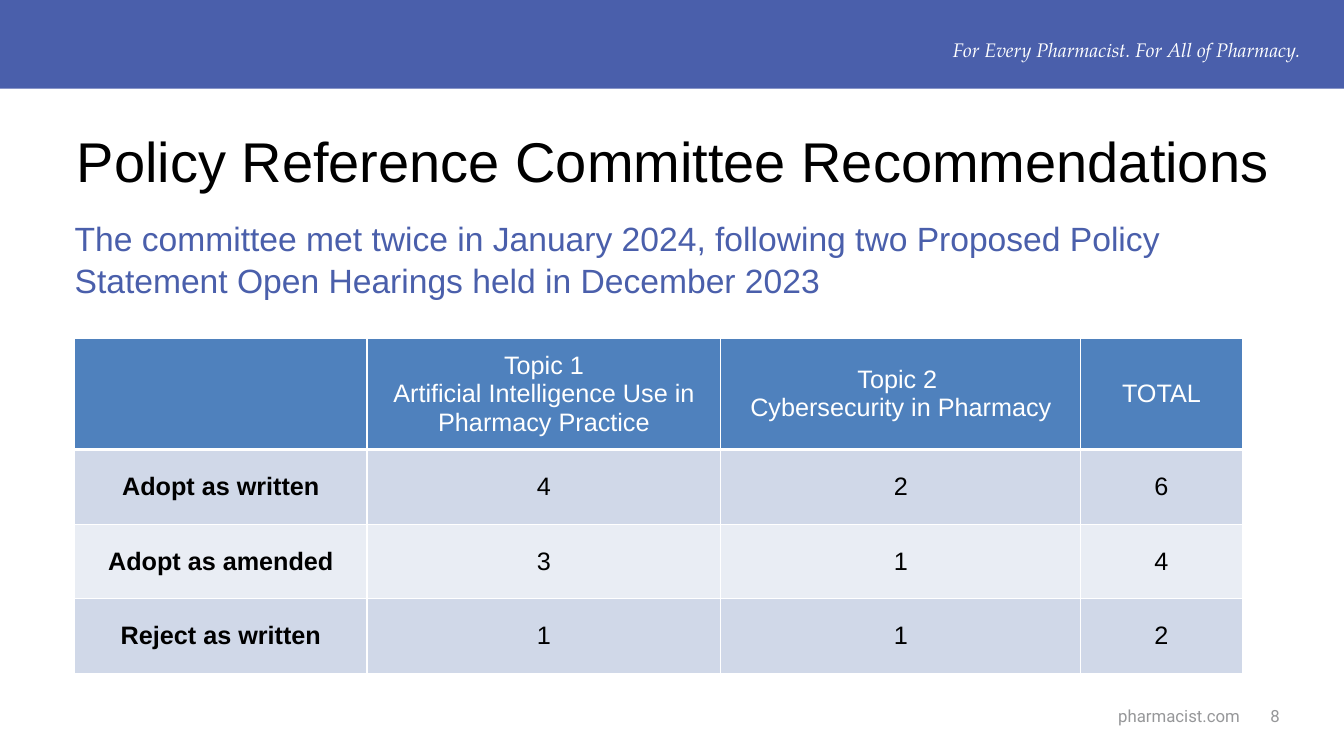
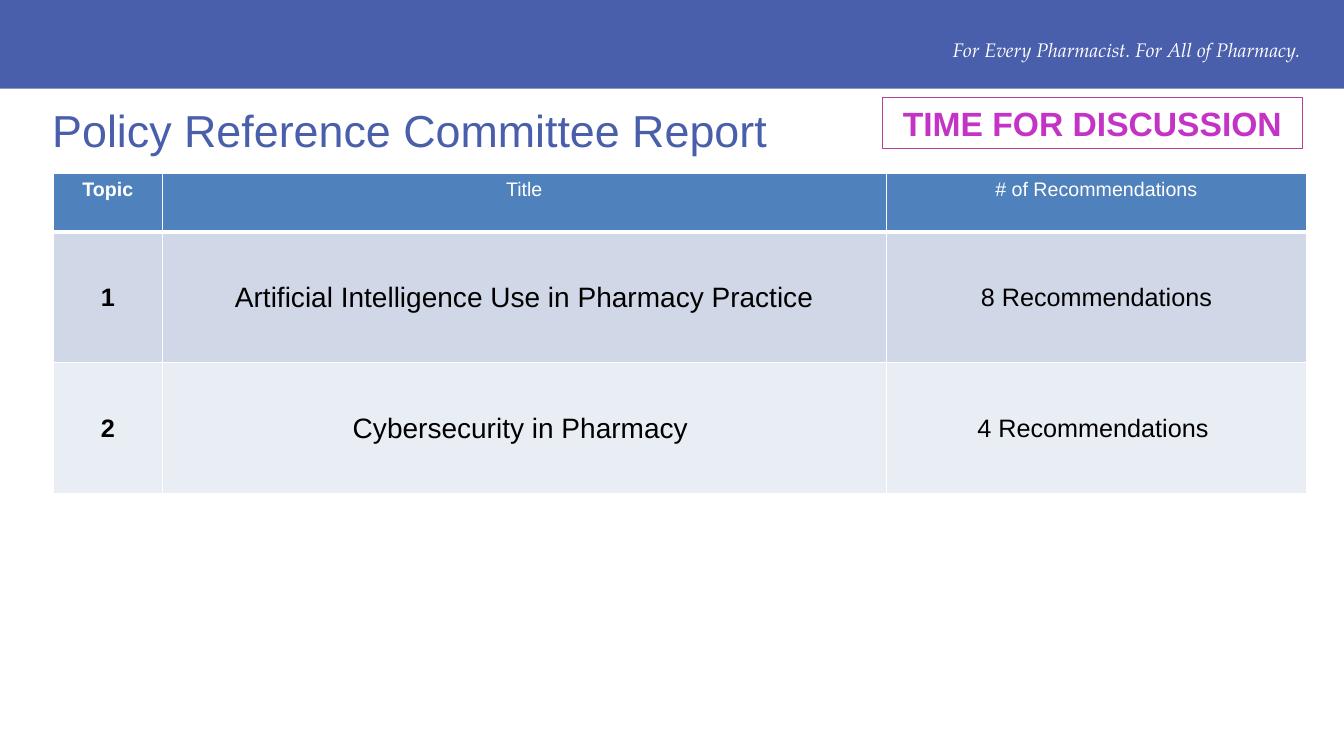
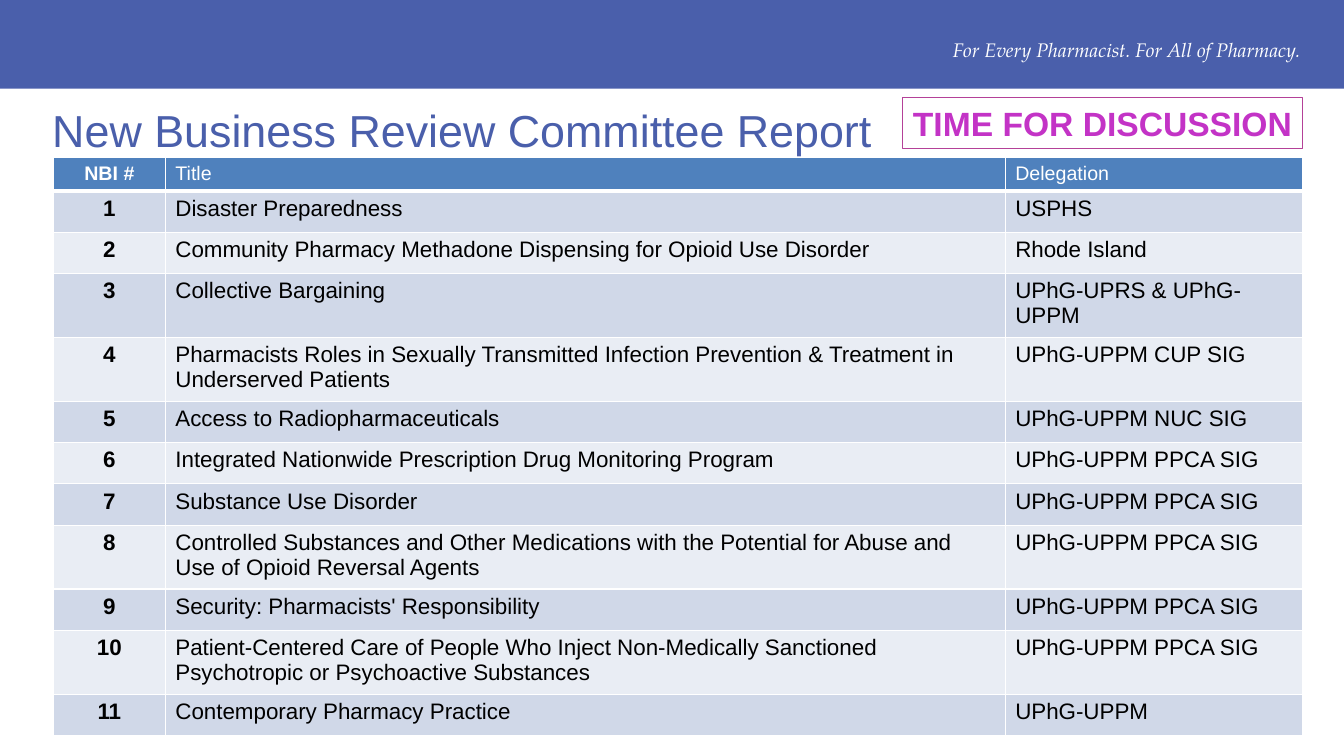
"""Build three committee report slides with a shared band, title style and table style."""
from itertools import product
from pptx import Presentation, util as u
from pptx.dml.color import RGBColor
from pptx.enum import shapes, text
from pptx.oxml import parse_xml
from pptx.oxml.ns import nsdecls

WIDE, HIGH = 13.33, 7.5
FONT = "Arial"
BLUE, HEAD, GRAY = "4A5FAB", "4F81BD", "969799"
PINK, EDGE = "C333C6", "B44198"
WHITE, BLACK = "FFFFFF", "000000"
BANDS = "D0D8E8", "E9EDF4"
LEFT, MID, RIGHT = text.PP_ALIGN.LEFT, text.PP_ALIGN.CENTER, text.PP_ALIGN.RIGHT
TOP, CORE = text.MSO_ANCHOR.TOP, text.MSO_ANCHOR.MIDDLE

TAG = "For Every Pharmacist. For All of Pharmacy."
CALL = "TIME FOR DISCUSSION"
LEAD = ("The committee met twice in January 2024, following two Proposed Policy "
        "Statement Open Hearings held in December 2023")
VOTES = [
    ("", "Topic 1\nArtificial Intelligence Use in Pharmacy Practice",
     "Topic 2 \nCybersecurity in Pharmacy", "TOTAL"),
    ("Adopt as written", "4", "2", "6"),
    ("Adopt as amended", "3", "1", "4"),
    ("Reject as written", "1", "1", "2"),
]
TOPICS = [
    ("Topic", "Title", "# of Recommendations"),
    ("1", "Artificial Intelligence Use in Pharmacy Practice", "8 Recommendations"),
    ("2", "Cybersecurity in Pharmacy ", "4 Recommendations "),
]
ITEMS = [
    ("Disaster Preparedness", "USPHS"),
    ("Community Pharmacy Methadone Dispensing for Opioid Use Disorder", "Rhode Island"),
    ("Collective Bargaining", "UPhG-UPRS & UPhG-UPPM"),
    ("Pharmacists Roles in Sexually Transmitted Infection Prevention & Treatment in "
     "Underserved Patients", "UPhG-UPPM CUP SIG"),
    ("Access to Radiopharmaceuticals", "UPhG-UPPM NUC SIG"),
    ("Integrated Nationwide Prescription Drug Monitoring Program", "UPhG-UPPM PPCA SIG"),
    ("Substance Use Disorder", "UPhG-UPPM PPCA SIG"),
    ("Controlled Substances and Other Medications with the Potential for Abuse and "
     "Use of Opioid Reversal Agents", "UPhG-UPPM PPCA SIG"),
    ("Security: Pharmacists' Responsibility", "UPhG-UPPM PPCA SIG"),
    ("Patient-Centered Care of People Who Inject Non-Medically Sanctioned "
     "Psychotropic or Psychoactive Substances", "UPhG-UPPM PPCA SIG"),
    ("Contemporary Pharmacy Practice", "UPhG-UPPM"),
]
LISTED = [("NBI #", "Title", "Delegation")]
LISTED += [(str(n), *item) for n, item in enumerate(ITEMS, 1)]


def rgb(code):
    return RGBColor.from_string(code)


def write(frame, words, size, color, align=LEFT, bold=False, font=FONT, slant=False):
    for n, line in enumerate(words.split("\n")):
        para = frame.add_paragraph() if n else frame.paragraphs[0]
        para.alignment = align
        if line:
            run = para.add_run()
            run.text = line
            face = run.font
            face.name, face.size, face.bold, face.italic = font, u.Pt(size), bold, slant
            face.color.rgb = rgb(color)


def label(slide, box, words, size, color, pad=True, anchor=TOP, wrap=True, lead=None, **look):
    frame = slide.shapes.add_textbox(*map(u.Inches, box)).text_frame
    frame.word_wrap, frame.vertical_anchor = wrap, anchor
    if not pad:
        frame.margin_left = frame.margin_right = frame.margin_top = frame.margin_bottom = 0
    write(frame, words, size, color, **look)
    if lead:
        frame.paragraphs[0].line_spacing = lead


def block(slide, box, fill=None, line=None):
    shape = slide.shapes.add_shape(shapes.MSO_SHAPE.RECTANGLE, *map(u.Inches, box))
    shape.shadow.inherit = False
    for part, color in ((shape.fill, fill), (shape.line.fill, line)):
        if color:
            part.solid()
            part.fore_color.rgb = rgb(color)
        else:
            part.background()
    if line:
        shape.line.width = u.Pt(0.75)
    return shape


def start(deck):
    slide = deck.slides.add_slide(deck.slide_layouts[6])
    block(slide, (0, 0, WIDE, 0.88), BLUE)
    label(slide, (8.42, 0.33, 4.58, 0.34), TAG, 14, WHITE, align=RIGHT,
          font="TeX Gyre Pagella", slant=True)
    return slide


def edge(cell, side, width):
    cell._tc.get_or_add_tcPr().append(parse_xml(
        f'<a:ln{side} {nsdecls("a")} w="{u.Pt(width)}"><a:solidFill>'
        f'<a:srgbClr val="{WHITE}"/></a:solidFill></a:ln{side}>'))


def grid(slide, spot, cols, rows, data, sizes, aligns, anchors, top):
    dims = map(u.Inches, (*spot, sum(cols), sum(rows)))
    table = slide.shapes.add_table(len(rows), len(cols), *dims).table
    for parts, name, spans in ((table.columns, "width", cols), (table.rows, "height", rows)):
        for part, span in zip(parts, spans):
            setattr(part, name, u.Inches(span))
    for r, c in product(range(len(rows)), range(len(cols))):
        cell = table.cell(r, c)
        for side in "LRTB":
            edge(cell, side, 3 if (r, side) in ((0, "B"), (1, "T")) else 1)
        cell.fill.solid()
        cell.fill.fore_color.rgb = rgb(BANDS[(r - 1) % 2] if r else HEAD)
        cell.vertical_anchor = anchors[r > 0]
        write(cell.text_frame, data[r][c], sizes[c] if r else top,
              BLACK if r else WHITE, aligns[c], c == 0)


def report(deck, title, width, right=12.92):
    slide = start(deck)
    label(slide, (0.42, 0.97, 11.64, 0.64), title, 32, BLUE)
    return slide, (right - width, 0.97, width, 0.5)


def call(slide, box):
    frame = block(slide, box, line=EDGE).text_frame
    frame.word_wrap, frame.vertical_anchor = True, CORE
    write(frame, CALL, 24, PINK, MID, True)


def main():
    deck = Presentation()
    deck.slide_width, deck.slide_height = u.Inches(WIDE), u.Inches(HIGH)

    slide = start(deck)
    for left, words in ((11.09, "pharmacist.com"), (12.6, "8")):
        label(slide, (left, 7, 1.24 if left < 12 else 0.29, 0.2), words, 12, GRAY,
              pad=False, wrap=False, font="Roboto")
    label(slide, (0.49, 1.1, 12.36, 0.97), "Policy Reference Committee Recommendations",
          40, BLACK, anchor=CORE, align=MID)
    label(slide, (0.74, 2.15, 11.58, 1.21), LEAD, 24, BLUE, pad=False, lead=1.04)
    grid(slide, (0.74, 3.36), (2.9, 3.51, 3.57, 1.6), [1.1] + [0.74] * 3, VOTES,
         [18] * 4, [MID] * 4, (CORE, CORE), 18)

    slide, box = report(deck, "Policy Reference Committee Report", 4.17)
    grid(slide, (0.53, 1.72), (1.08, 7.18, 4.17), [0.58] + [1.3] * 2, TOPICS,
         (18, 20, 18), [MID] * 3, (TOP, CORE), 14)
    call(slide, box)

    slide, box = report(deck, "New Business Review Committee Report", 3.97)
    tall = [0.63 if len(name) > 70 or len(group) > 20 else 0.41 for name, group in ITEMS]
    grid(slide, (0.53, 1.56), (1.11, 8.33, 2.95), [0.33] + tall, LISTED,
         [16] * 3, (MID, LEFT, LEFT), (TOP, TOP), 14)
    call(slide, box)

    deck.save("out.pptx")


if __name__ == "__main__":
    main()
